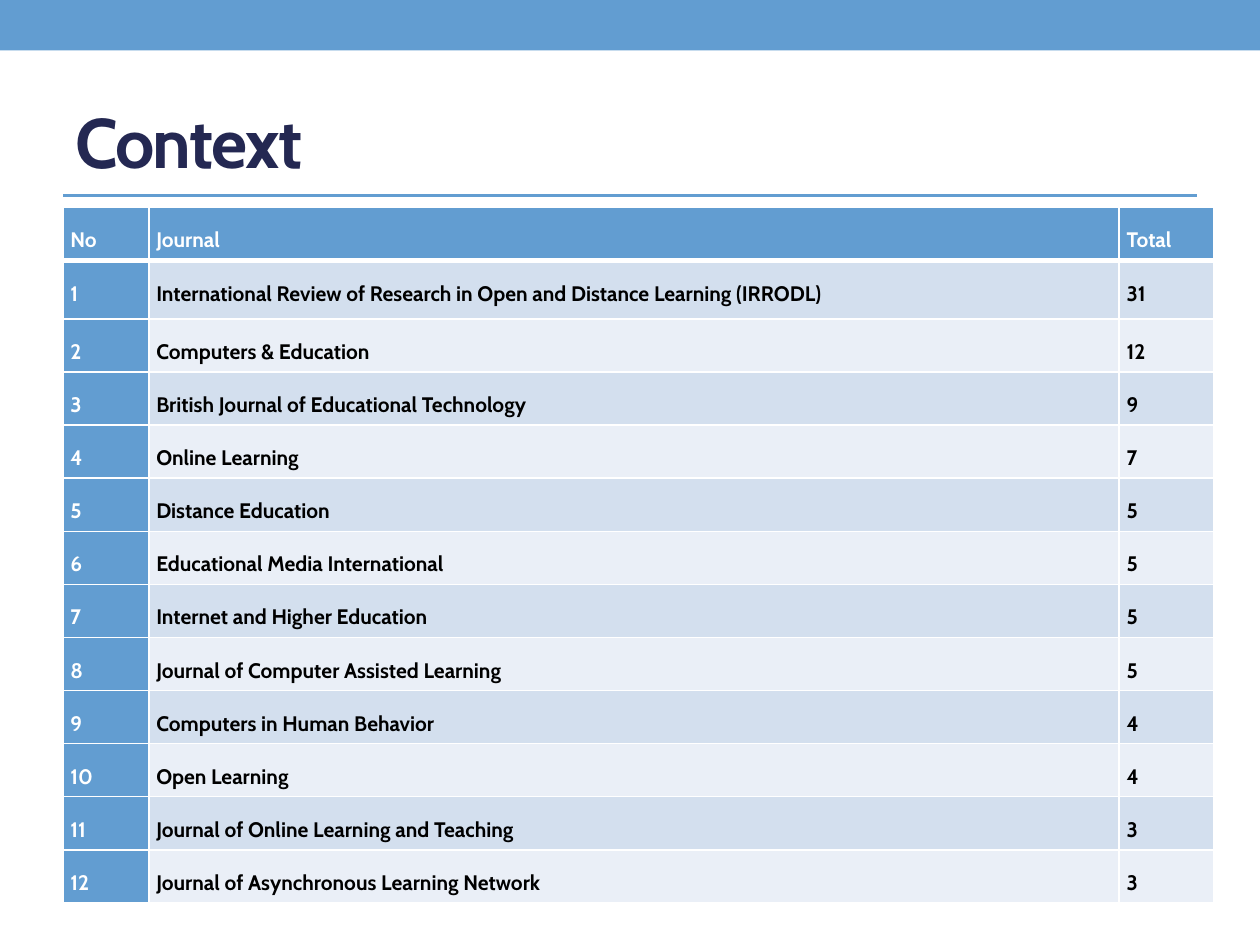
from lxml.etree import SubElement
from pptx import Presentation
from pptx.dml.color import RGBColor
from pptx.enum.shapes import MSO_CONNECTOR, MSO_SHAPE
from pptx.enum.text import MSO_ANCHOR
from pptx.oxml.ns import qn
from pptx.util import Cm, Pt
from dataclasses import dataclass

TITLE = "Context"
HEADER = ("No", "Journal", "Total")
JOURNALS = [
    ("International Review of Research in Open and Distance Learning (IRRODL)", 31),
    ("Computers & Education", 12),
    ("British Journal of Educational Technology", 9),
    ("Online Learning", 7),
    ("Distance Education", 5),
    ("Educational Media International", 5),
    ("Internet and Higher Education", 5),
    ("Journal of Computer Assisted Learning", 5),
    ("Computers in Human Behavior", 4),
    ("Open Learning", 4),
    ("Journal of Online Learning and Teaching", 3),
    ("Journal of Asynchronous Learning Network", 3),
]


@dataclass(frozen=True)
class Theme:
    font: str = "Cabin"
    accent: str = "629DD1"
    title: str = "242852"
    text: str = "000000"
    light: str = "FFFFFF"
    bands: tuple = ("D3DFEE", "EAEFF7")
    title_size: int = 40
    table_size: int = 12
    rule_width: float = 2.08
    border: int = 1
    header_border: int = 3


THEME = Theme()
SLIDE_WIDTH, SLIDE_HEIGHT = 25.4, 19.05
MARGIN = 1.27
BAND_HEIGHT = 1.02
TITLE_TOP, TITLE_HEIGHT = 1.47, 2.74
RULE_TOP = 3.94
TABLE_TOP = 4.18
COLUMN_WIDTHS = (1.73, 19.56, 1.9)
ROW_HEIGHT, FIRST_JOURNAL_HEIGHT = 1.07, 1.18
CELL_FORMAT = dict.fromkeys(
    ("margin_left", "margin_right", "margin_top", "margin_bottom"), Cm(0.15))
TITLE_FORMAT = {"word_wrap": True, "vertical_anchor": MSO_ANCHOR.MIDDLE}


def apply_format(target, values):
    for name, value in values.items():
        setattr(target, name, value)


def paint(fill, color):
    fill.solid()
    fill.fore_color.rgb = RGBColor.from_string(color)


def write(paragraph, text, size, color):
    run = paragraph.add_run()
    run.text = text
    apply_format(run.font, {"name": THEME.font, "size": Pt(size), "bold": True})
    run.font.color.rgb = RGBColor.from_string(color)
    return run


def add_border(cell, side, width):
    properties = cell._tc.get_or_add_tcPr()
    line = SubElement(properties, qn(f"a:ln{side}"), w=str(Pt(width)))
    fill = SubElement(line, qn("a:solidFill"))
    SubElement(fill, qn("a:srgbClr"), val=THEME.light)


def add_top_band(slide):
    shape = slide.shapes.add_shape(
        MSO_SHAPE.RECTANGLE, 0, 0, Cm(SLIDE_WIDTH), Cm(BAND_HEIGHT))
    shape.shadow.inherit = False
    paint(shape.fill, THEME.accent)
    shape.line.fill.background()


def add_rule(slide):
    connector = slide.shapes.add_connector(
        MSO_CONNECTOR.STRAIGHT, Cm(MARGIN), Cm(RULE_TOP),
        Cm(SLIDE_WIDTH - MARGIN), Cm(RULE_TOP))
    connector.line.width = Pt(THEME.rule_width)
    connector.line.color.rgb = RGBColor.from_string(THEME.accent)
    SubElement(connector._element.spPr, qn("a:effectLst"))


def add_title(slide):
    shape = slide.shapes.add_textbox(
        Cm(MARGIN), Cm(TITLE_TOP), Cm(SLIDE_WIDTH - 2 * MARGIN), Cm(TITLE_HEIGHT))
    apply_format(shape.text_frame, TITLE_FORMAT)
    run = write(shape.text_frame.paragraphs[0], TITLE, THEME.title_size, THEME.title)
    run.font._element.set("spc", "-100")


def format_cell(cell, text, row, column):
    is_heading = row == 0 or column == 0
    apply_format(cell, CELL_FORMAT)
    paragraph = cell.text_frame.paragraphs[0]
    paragraph.line_spacing = 1.5
    write(paragraph, text, THEME.table_size, THEME.light if is_heading else THEME.text)
    widths = {side: THEME.border for side in "LRTB"}
    if row < 2:
        widths["TB"[row == 0]] = THEME.header_border
    for side, width in widths.items():
        add_border(cell, side, width)
    paint(cell.fill, THEME.accent if is_heading else THEME.bands[(row - 1) % 2])


def add_journal_table(slide):
    rows = [HEADER] + [
        (str(number), name, str(total))
        for number, (name, total) in enumerate(JOURNALS, 1)]
    heights = [ROW_HEIGHT] * len(rows)
    heights[1] = FIRST_JOURNAL_HEIGHT
    table = slide.shapes.add_table(
        len(rows), len(HEADER), Cm(MARGIN), Cm(TABLE_TOP),
        Cm(sum(COLUMN_WIDTHS)), Cm(sum(heights))).table
    for column, width in zip(table.columns, COLUMN_WIDTHS):
        column.width = Cm(width)
    for row, height in zip(table.rows, heights):
        row.height = Cm(height)
    for row, texts in enumerate(rows):
        for column, text in enumerate(texts):
            format_cell(table.cell(row, column), text, row, column)


def main():
    presentation = Presentation()
    apply_format(presentation, {
        "slide_width": Cm(SLIDE_WIDTH), "slide_height": Cm(SLIDE_HEIGHT)})
    slide = presentation.slides.add_slide(presentation.slide_layouts[6])
    add_top_band(slide)
    add_rule(slide)
    add_title(slide)
    add_journal_table(slide)
    presentation.save("out.pptx")


if __name__ == "__main__":
    main()
